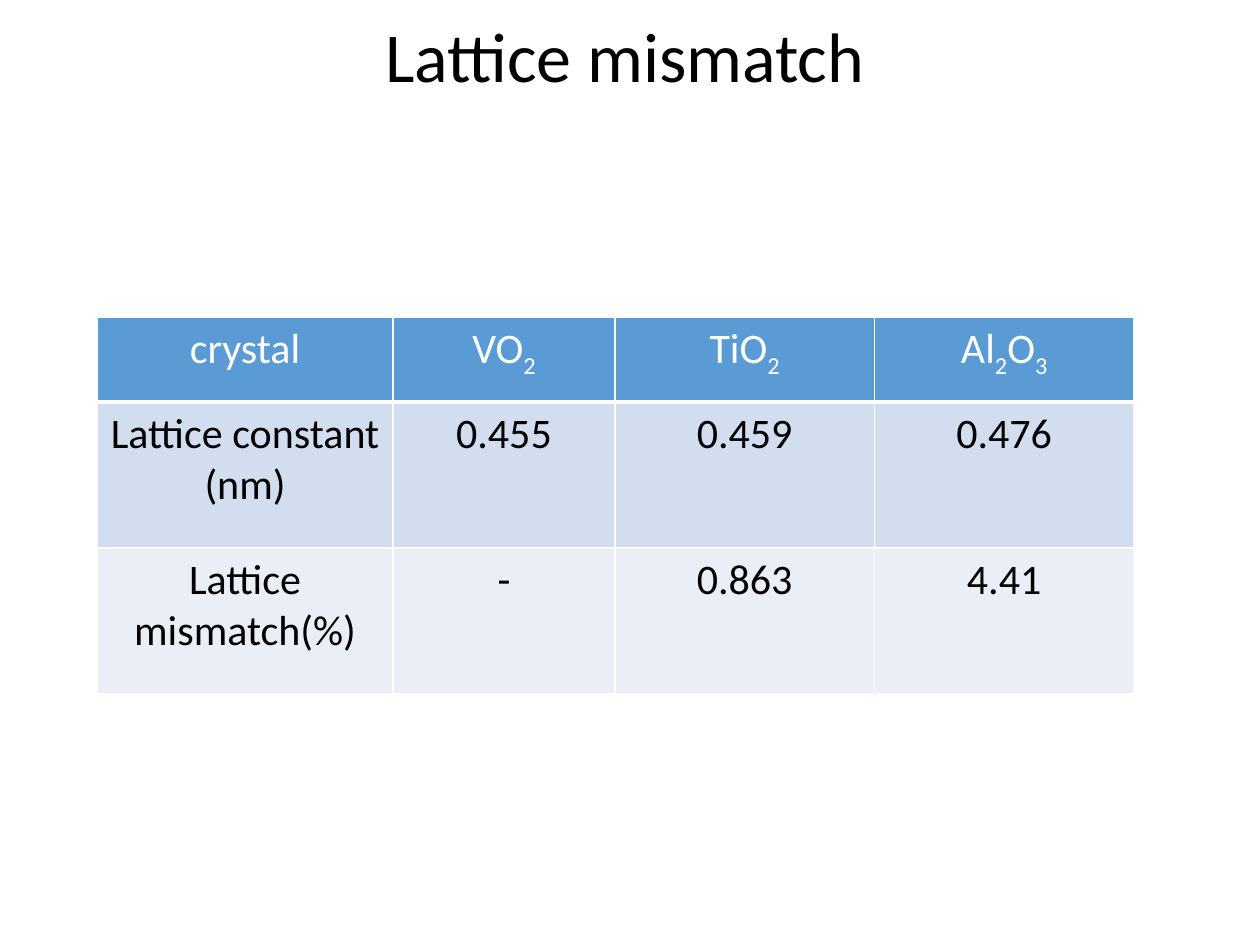
import itertools

import pptx
import pptx.dml.color
import pptx.enum.text
import pptx.oxml
import pptx.oxml.ns
import pptx.util
from pptx.util import Inches

COLORS = {
    "header": "5B9BD5",
    "band_dark": "D2DEEF",
    "band_light": "EAEFF7",
    "white": "FFFFFF",
    "black": "000000",
}


def add_span(para, text, size, color, subscript=False):
    span = para.add_run()
    span.text = text
    span.font.name = "Calibri"
    span.font.size = pptx.util.Pt(size)
    span.font.color.rgb = pptx.dml.color.RGBColor.from_string(COLORS[color])
    if subscript:
        span._r.get_or_add_rPr().set("baseline", "-25000")


def add_border(cell, side, points):
    """Draw a white line on one side (L, R, T or B) of a cell."""
    cell._tc.get_or_add_tcPr().append(pptx.oxml.parse_xml(
        f'<a:ln{side} {pptx.oxml.ns.nsdecls("a")} w="{pptx.util.Pt(points)}">'
        f'<a:solidFill><a:srgbClr val="{COLORS["white"]}"/></a:solidFill>'
        f'</a:ln{side}>'))


deck = pptx.Presentation()
deck.slide_width = Inches(10)
deck.slide_height = Inches(7.5)
page = deck.slides.add_slide(deck.slide_layouts[6])

# Table of crystals
rows = [
    ["crystal", "VO2", "TiO2", "Al2O3"],
    ["Lattice constant (nm)", "0.455", "0.459", "0.476"],
    ["Lattice mismatch(%)", "-", "0.863", "4.41"],
]
row_heights = [0.67, 1.16, 1.16]
row_fills = ["header", "band_dark", "band_light"]
column_widths = [2.35, 1.76, 2.06, 2.06]

table = page.shapes.add_table(
    len(rows), len(column_widths), Inches(0.77), Inches(2.52),
    Inches(sum(column_widths)), Inches(sum(row_heights))).table
for column, width in zip(table.columns, column_widths):
    column.width = Inches(width)

for r, (texts, height, fill) in enumerate(zip(rows, row_heights, row_fills)):
    table.rows[r].height = Inches(height)
    is_header = r == 0
    for c, text in enumerate(texts):
        cell = table.cell(r, c)
        for side in "LRTB":
            add_border(cell, side, 3 if is_header and side == "B" else 1)
        cell.fill.solid()
        cell.fill.fore_color.rgb = pptx.dml.color.RGBColor.from_string(COLORS[fill])
        para = cell.text_frame.paragraphs[0]
        para.alignment = pptx.enum.text.PP_ALIGN.CENTER
        if is_header:
            # Digits in a chemical formula are subscripts
            for is_digit, letters in itertools.groupby(text, str.isdigit):
                add_span(para, "".join(letters), 24, "white", is_digit)
        else:
            add_span(para, text, 24, "black")

# Title
box = page.shapes.add_textbox(Inches(2.96), Inches(0.05), Inches(4.06), Inches(0.77))
box.text_frame.word_wrap = False
box.text_frame.auto_size = pptx.enum.text.MSO_AUTO_SIZE.SHAPE_TO_FIT_TEXT
add_span(box.text_frame.paragraphs[0], "Lattice mismatch", 40, "black")

deck.save("out.pptx")
